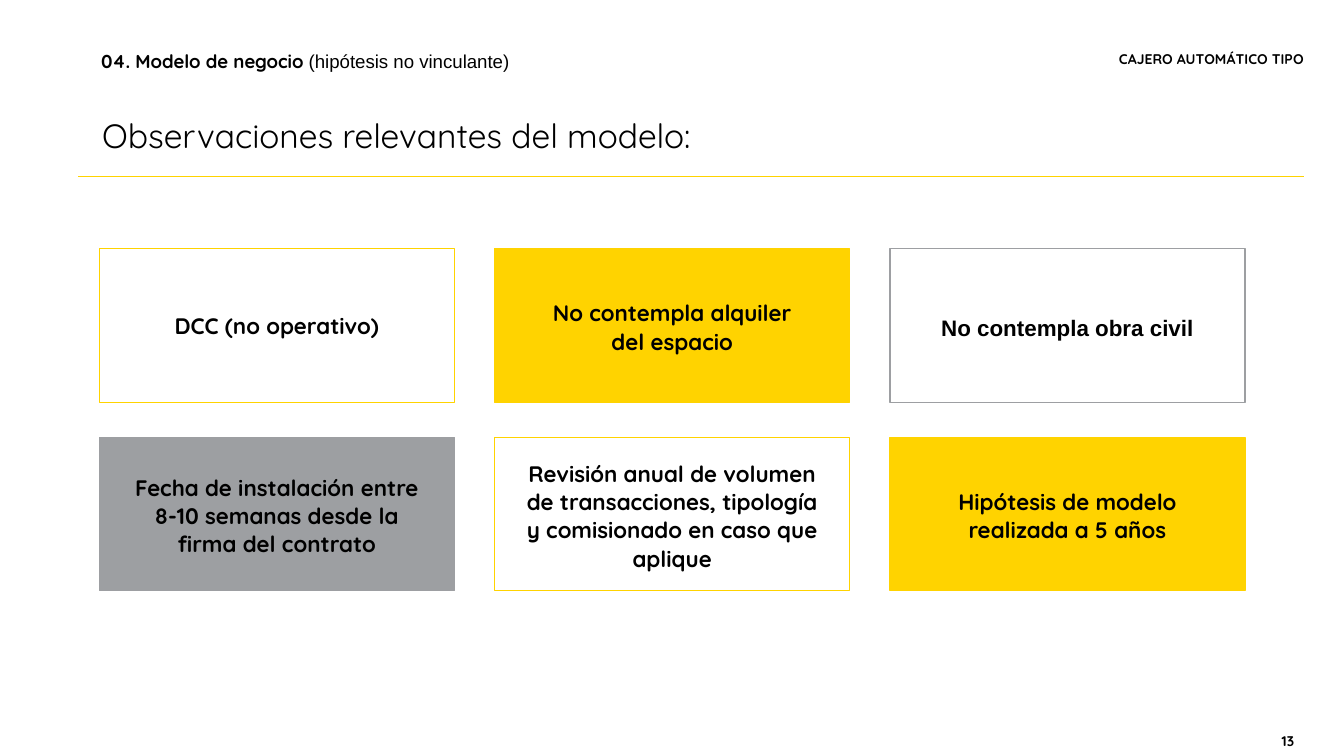
from lxml import etree
from pptx import Presentation
from pptx.dml.color import RGBColor
from pptx.enum.shapes import MSO_CONNECTOR, MSO_SHAPE
from pptx.enum.text import MSO_ANCHOR, MSO_AUTO_SIZE, PP_ALIGN
from pptx.oxml.ns import qn
from pptx.util import Cm, Pt

LEFT, CENTER, RIGHT = PP_ALIGN.LEFT, PP_ALIGN.CENTER, PP_ALIGN.RIGHT
TOP, MIDDLE = MSO_ANCHOR.TOP, MSO_ANCHOR.MIDDLE
RECT, STRAIGHT = MSO_SHAPE.RECTANGLE, MSO_CONNECTOR.STRAIGHT
NO_FIT = MSO_AUTO_SIZE.NONE

YELLOW, GREY, BLACK = "FFD300", "9D9FA2", "000000"
MAIN_FONT, ALT_FONT = "Quicksand", "Arial"

COLUMNS = 3
CARD_LEFT, CARD_TOP, CARD_W, CARD_H = 1.88, 4.7, 6.71, 2.9
STEP_X, STEP_Y = 7.47, 3.56
FIRST_LINE_H, NEXT_LINE_H = 0.76, 0.53

# text, number of lines, text width, colour, filled, font
CARDS = [
    ("DCC (no operativo)", 1, 4.67, YELLOW, False, MAIN_FONT),
    ("No contempla alquiler del espacio", 2, 5.41, YELLOW, True, MAIN_FONT),
    ("No contempla obra civil", 1, 5.41, GREY, False, ALT_FONT),
    ("Fecha de instalación entre 8-10 semanas desde la firma del contrato",
     3, 6.22, GREY, True, MAIN_FONT),
    ("Revisión anual de volumen de transacciones, tipología y comisionado "
     "en caso que aplique", 4, 6.05, YELLOW, False, MAIN_FONT),
    ("Hipótesis de modelo realizada a 5 años", 2, 5.41, YELLOW, True, MAIN_FONT),
]


def rgb(value):
    return RGBColor.from_string(value)


def set_attributes(target, values):
    for name, value in values.items():
        setattr(target, name, value)


def place(s, x, y, w, h):
    set_attributes(s, {"left": Cm(x), "top": Cm(y), "width": Cm(w), "height": Cm(h)})


def write(s, runs, size, align=LEFT, spacing=1.0, anchor=TOP, margins=(0.25, 0.13)):
    """Fill a shape with one paragraph of (text, font, bold) runs."""
    side, edge = map(Cm, margins)
    tf = s.text_frame
    set_attributes(tf, {
        "word_wrap": True, "auto_size": NO_FIT, "vertical_anchor": anchor,
        "margin_left": side, "margin_right": side,
        "margin_top": edge, "margin_bottom": edge,
    })
    p = tf.paragraphs[0]
    set_attributes(p, {"alignment": align, "line_spacing": spacing,
                       "space_before": Pt(0)})
    for text, font, bold in runs:
        r = p.add_run()
        r.text = text
        set_attributes(r.font, {"name": font, "size": Pt(size), "bold": bold})
        r.font.color.rgb = rgb(BLACK)


def add_text(slide, box, runs, size, **formats):
    s = slide.shapes.add_textbox(*map(Cm, box))
    write(s, runs, size, **formats)


def add_title(slide, text):
    s = slide.shapes.title
    place(s, 1.68, 2.13, 14.71, 0.64)
    write(s, [(text, MAIN_FONT, False)], 18, spacing=0.9)


def add_rule(slide, x1, x2, y):
    s = slide.shapes.add_connector(STRAIGHT, Cm(x1), Cm(y), Cm(x2), Cm(y))
    s.line.color.rgb = rgb(YELLOW)
    s.line.width = Pt(0.75)
    etree.SubElement(s._element.spPr, qn("a:effectLst"))


def add_frame(slide, x, y, color, filled):
    s = slide.shapes.add_shape(RECT, Cm(x), Cm(y), Cm(CARD_W), Cm(CARD_H))
    s.shadow.inherit = False
    if filled:
        s.fill.solid()
        s.fill.fore_color.rgb = rgb(color)
    else:
        s.fill.background()
    s.line.color.rgb = rgb(color)
    s.line.width = Pt(0.75)


def add_card(slide, index, text, lines, width, color, filled, font):
    """Draw a card at its grid position, with its text centred on it."""
    row, column = divmod(index, COLUMNS)
    x, y = CARD_LEFT + column * STEP_X, CARD_TOP + row * STEP_Y
    add_frame(slide, x, y, color, filled)
    height = FIRST_LINE_H + (lines - 1) * NEXT_LINE_H
    box = (x + (CARD_W - width) / 2, y + (CARD_H - height) / 2, width, height)
    spacing = 1.0 if index == 0 else 1.05
    add_text(slide, box, [(text, font, True)], 12, align=CENTER, spacing=spacing)


def main():
    prs = Presentation()
    prs.slide_width, prs.slide_height = Cm(25.4), Cm(14.28)
    slide = prs.slides.add_slide(prs.slide_layouts[5])

    add_text(slide, (23.6, 13.72, 1.04, 0.56), [("13", MAIN_FONT, True)], 7.5,
             align=RIGHT, anchor=MIDDLE, margins=(0.18, 0.1))
    add_text(slide, (1.68, 0.53, 13.61, 1.04),
             [("04. Modelo de negocio ", MAIN_FONT, True),
              ("(hipótesis no vinculante)", ALT_FONT, False)],
             10, spacing=1.5, anchor=MIDDLE, margins=(0.23, 0.1))
    add_text(slide, (5.72, 0.99, 18.92, 0.28),
             [("CAJERO AUTOMÁTICO TIPO", MAIN_FONT, True)], 7.5,
             align=RIGHT, spacing=0.9, margins=(0, 0))
    add_title(slide, "Observaciones relevantes del modelo:")
    add_rule(slide, 1.47, 24.64, 3.33)
    for index, card in enumerate(CARDS):
        add_card(slide, index, *card)

    prs.save("out.pptx")


if __name__ == "__main__":
    main()
